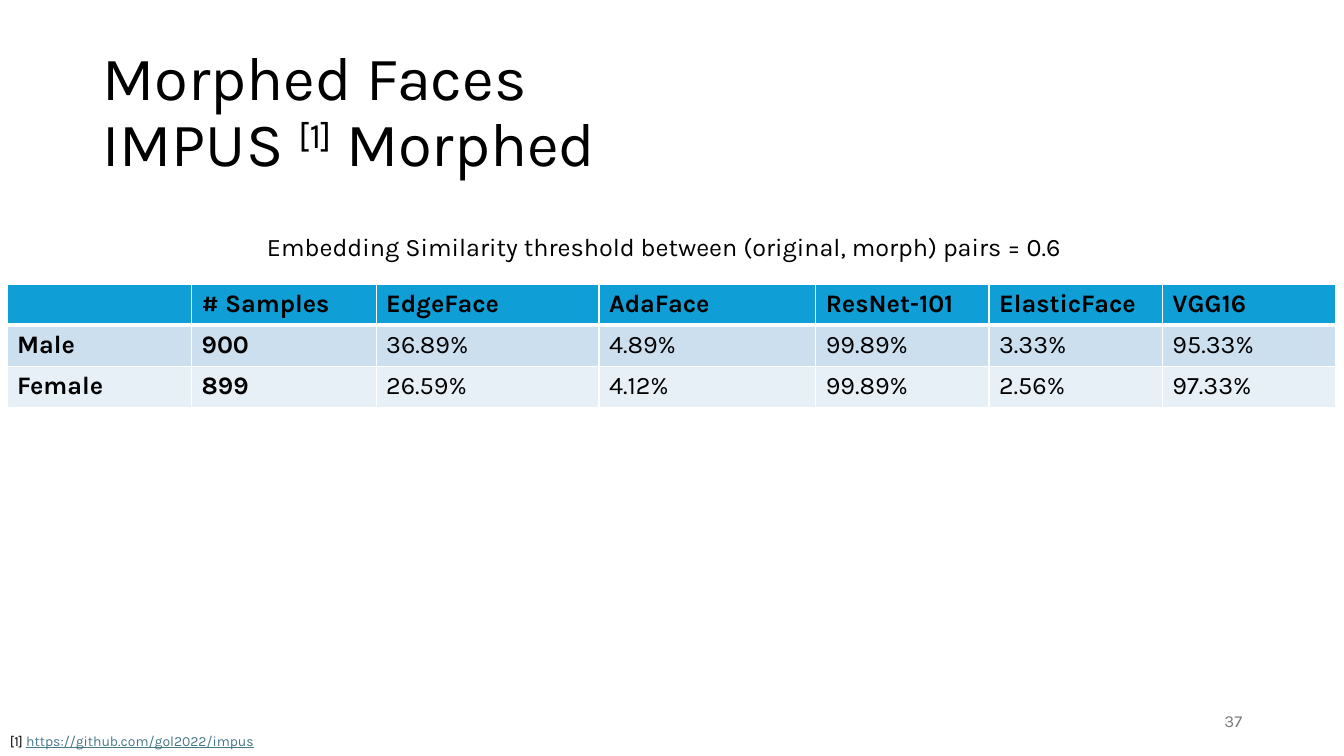
from lxml import etree
from pptx import Presentation
from pptx import util as u
from pptx.dml.color import RGBColor
from pptx.enum import text
from pptx.oxml.ns import qn

BLACK = RGBColor(0x00, 0x00, 0x00)
WHITE = RGBColor(0xFF, 0xFF, 0xFF)
GREY = RGBColor(0x79, 0x79, 0x79)
LINK = RGBColor(0x46, 0x78, 0x86)
HEADER = RGBColor(0x0F, 0x9E, 0xD5)
BANDS = (RGBColor(0xCC, 0xDF, 0xEF), RGBColor(0xE7, 0xF0, 0xF7))

RESULTS = [
    ["", "# Samples", "EdgeFace", "AdaFace", "ResNet-101", "ElasticFace", "VGG16"],
    ["Male", "900", "36.89%", "4.89%", "99.89%", "3.33%", "95.33%"],
    ["Female", "899", "26.59%", "4.12%", "99.89%", "2.56%", "97.33%"],
]
COLUMN_WIDTHS = [13.73, 13.73, 16.58, 16.13, 12.9, 12.9, 12.9]
ROW_HEIGHT = 5.43


class Slide:
    """Style and current slide; lengths are percent of the slide's width or height."""

    face = "Karla"

    def __init__(self, deck):
        self.deck = deck
        self.page = deck.slides.add_slide(deck.slide_layouts[6])
        self.page.background.fill.solid()
        self.page.background.fill.fore_color.rgb = WHITE

    def across(self, share):
        return round(self.deck.slide_width * share / 100)

    def down(self, share):
        return round(self.deck.slide_height * share / 100)

    def frame(self, left, top, width, height):
        return self.across(left), self.down(top), self.across(width), self.down(height)

    def style(self, para, size, color=BLACK, bold=False):
        font = para.font
        font.name, font.size, font.bold = self.face, u.Pt(size), bold
        font.color.rgb = color

    def text(self, area, words, size, color=BLACK, anchor=text.MSO_ANCHOR.TOP,
             align=text.PP_ALIGN.LEFT):
        box = self.page.shapes.add_textbox(*self.frame(*area)).text_frame
        box.word_wrap = True
        box.vertical_anchor = anchor
        para = box.paragraphs[0]
        para.alignment = align
        self.style(para, size, color)
        if words:
            para.add_run().text = words
        return para

    def border(self, cell, side, points):
        line = etree.SubElement(cell._tc.get_or_add_tcPr(), qn("a:ln" + side),
                                w=str(u.Pt(points)))
        fill = etree.SubElement(line, qn("a:solidFill"))
        etree.SubElement(fill, qn("a:srgbClr"), val=str(WHITE))

    def table(self, left, top, rows, widths, height):
        area = self.frame(left, top, sum(widths), height * len(rows))
        grid = self.page.shapes.add_table(len(rows), len(widths), *area).table
        for column, width in zip(grid.columns, widths):
            column.width = self.across(width)
        for row_index, row in enumerate(rows):
            grid.rows[row_index].height = self.down(height)
            for column_index, words in enumerate(row):
                cell = grid.cell(row_index, column_index)
                cell.text = words
                self.style(cell.text_frame.paragraphs[0], 18,
                           bold=row_index == 0 or column_index < 2)
                # Thick rule between header and body, thin elsewhere
                self.border(cell, "L", 1)
                self.border(cell, "R", 1)
                self.border(cell, "T", 3 if row_index == 1 else 1)
                self.border(cell, "B", 3 if row_index == 0 else 1)
                cell.fill.solid()
                cell.fill.fore_color.rgb = BANDS[row_index - 1] if row_index else HEADER


def main():
    deck = Presentation()
    deck.slide_width, deck.slide_height = u.Inches(13.33), u.Inches(7.5)
    slide = Slide(deck)

    # Title with a raised citation mark
    title = slide.text((6.88, 5.33, 86.25, 19.33), "Morphed Faces", 44,
                       anchor=text.MSO_ANCHOR.MIDDLE)
    title.line_spacing = 0.9
    title.add_line_break()
    title.add_run().text = "IMPUS "
    mark = title.add_run()
    mark.text = "[1]"
    mark.font._element.set("baseline", "30000")
    title.add_run().text = " Morphed"

    # Results and their caption
    slide.table(0.53, 37.6, RESULTS, COLUMN_WIDTHS, ROW_HEIGHT)
    slide.text((19.13, 30, 67.14, 5.33),
               "Embedding Similarity threshold between (original, morph) pairs = 0.6", 18)

    # Page number
    slide.text((70.67, 92.67, 22.5, 5.33), "37", 12, GREY,
               text.MSO_ANCHOR.MIDDLE, text.PP_ALIGN.RIGHT)

    # Footnote
    footnote = slide.text((0, 96.27, 22.5, 3.6), "[1] ", 10)
    address = footnote.add_run()
    address.text = "https://github.com/gol2022/impus"
    address.font.color.rgb = LINK
    address.font.underline = True

    deck.save("out.pptx")


if __name__ == "__main__":
    main()
